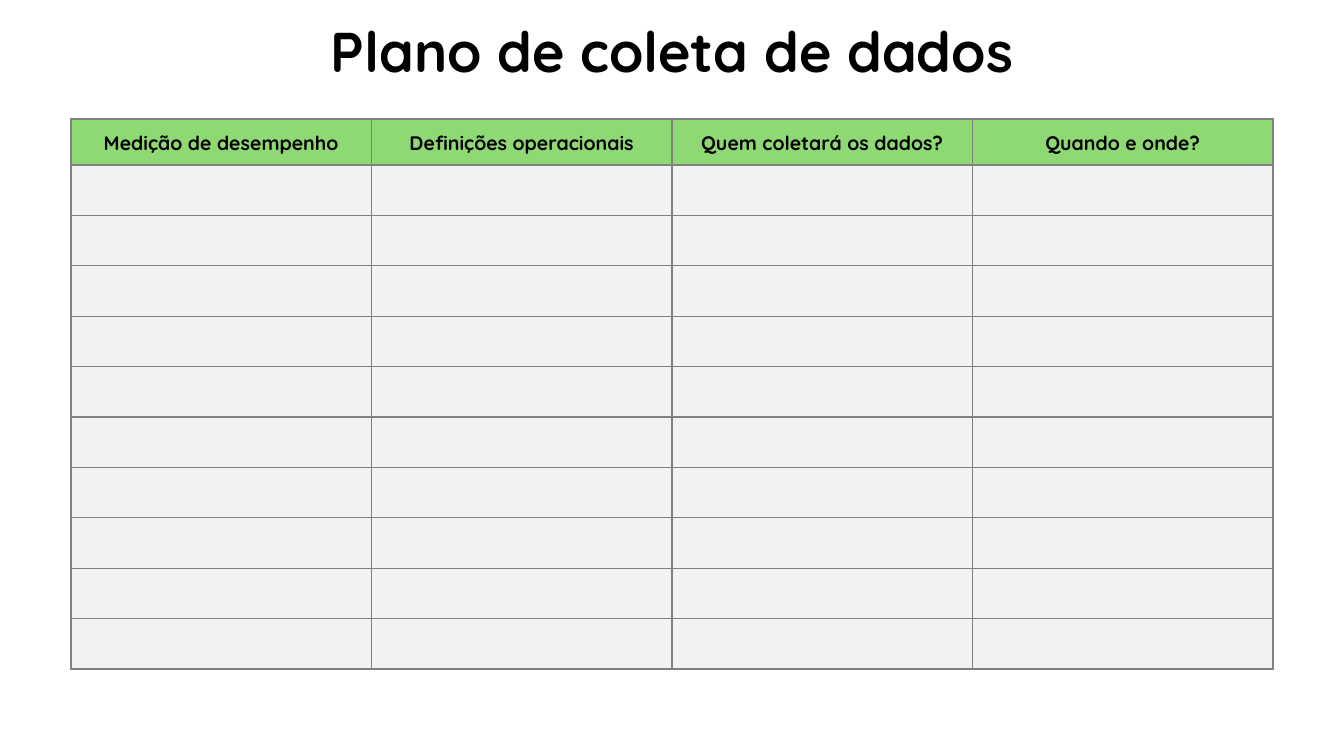
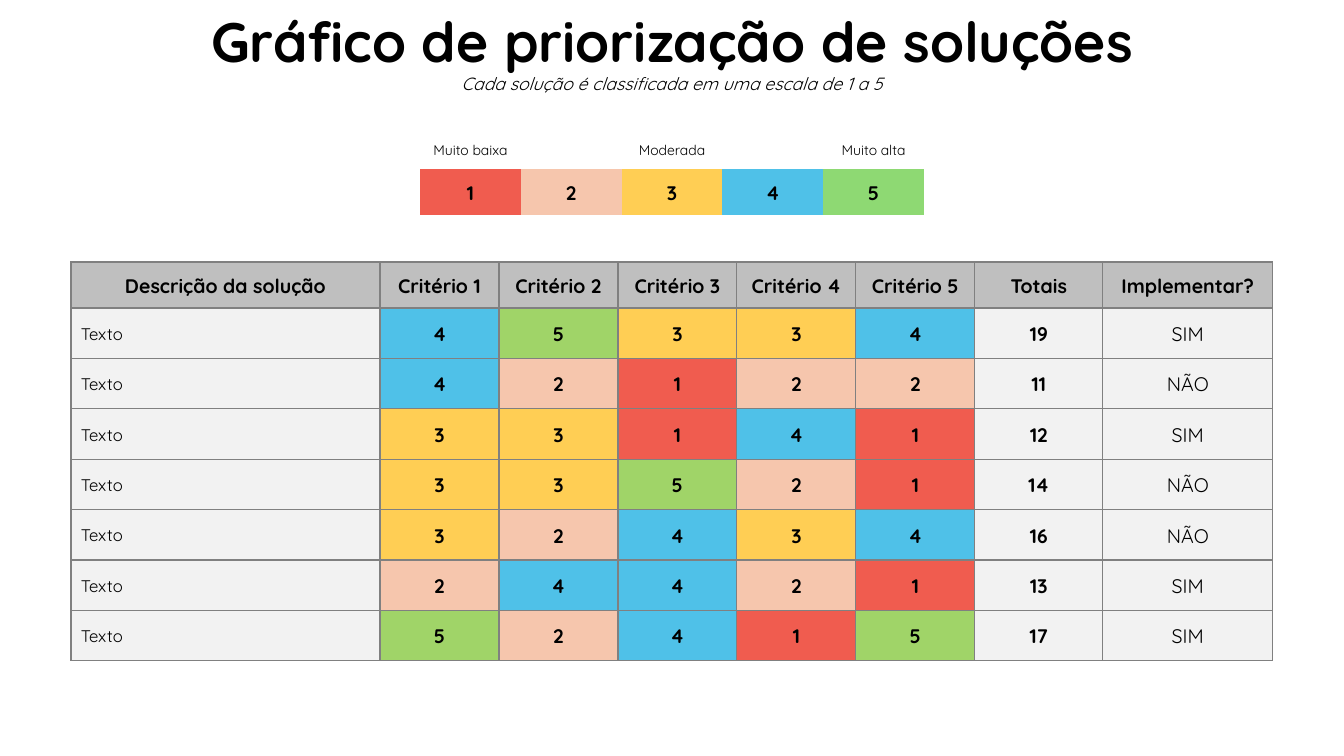
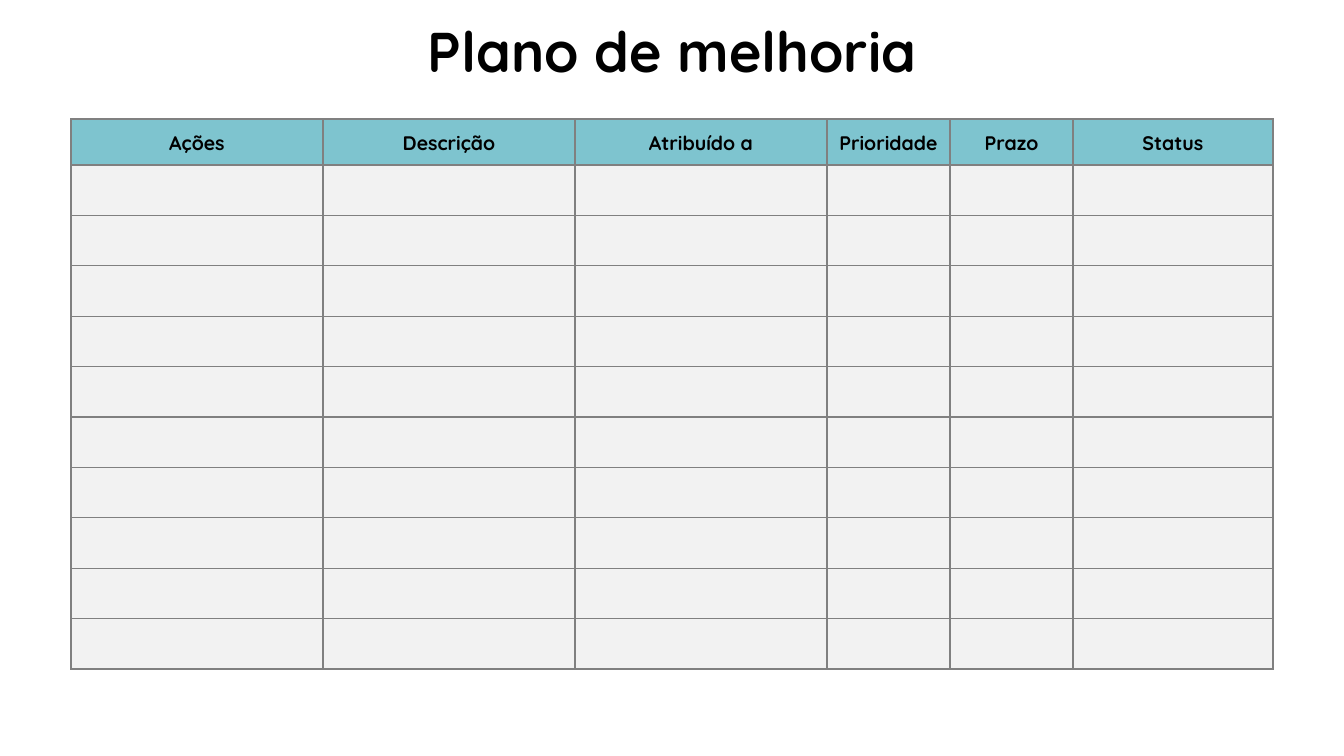
from lxml import etree
from pptx import Presentation
from pptx.dml.color import RGBColor
from pptx.enum.text import MSO_ANCHOR, PP_ALIGN
from pptx.oxml.ns import qn
from pptx.util import Emu, Pt

LEFT, CENTER = PP_ALIGN.LEFT, PP_ALIGN.CENTER
MIDDLE = MSO_ANCHOR.MIDDLE

PX = 914400 / 100.8
PAGE_WIDTH, PAGE_HEIGHT = 1344, 756
TABLE_LEFT, TABLE_WIDTH = 71, 1202
HEADER_HEIGHT = 46
CELL_INSET = 10
FONT = "Quicksand"
PLAIN_STYLE = "{2D5ABB26-0587-4C30-8999-92F81FD0307C}"

COLORS = {
    "text": "000000",
    "border": "808080",
    "body": "F2F2F2",
    "green": "8ED973",
    "teal": "7EC4CF",
    "gray": "BFBFBF",
}
SCORE_COLORS = {
    1: "F05C4F",
    2: "F6C6AD",
    3: "FFCE54",
    4: "4FC1E8",
    5: "A0D468",
}
LEGEND_COLORS = {**SCORE_COLORS, 5: COLORS["green"]}

SOLUTIONS = [
    ([4, 5, 3, 3, 4], "SIM"),
    ([4, 2, 1, 2, 2], "NÃO"),
    ([3, 3, 1, 4, 1], "SIM"),
    ([3, 3, 5, 2, 1], "NÃO"),
    ([3, 2, 4, 3, 4], "NÃO"),
    ([2, 4, 4, 2, 1], "SIM"),
    ([5, 2, 4, 1, 5], "SIM"),
]


def px(length):
    return Emu(round(length * PX))


def add_span(para, text, size=14, bold=False, italic=False, align=CENTER, spacing=1.07):
    para.alignment = align
    para.line_spacing = spacing
    span = para.add_run()
    span.text = text
    span.font.name = FONT
    span.font.size = Pt(size)
    span.font.bold = bold
    span.font.italic = italic
    span.font.color.rgb = RGBColor.from_string(COLORS["text"])


def add_title(page, title, width, size=40, subtitle=None):
    box = page.shapes.add_textbox(px((PAGE_WIDTH - width) / 2), 0, px(width), px(109))
    frame = box.text_frame
    frame.word_wrap = True
    frame.vertical_anchor = MIDDLE
    para = frame.paragraphs[0]
    add_span(para, title, size=size, bold=True, spacing=0.9)
    if subtitle:
        para.add_line_break()
        add_span(para, subtitle, size=12.6, italic=True, spacing=0.9)


def add_borders(cell):
    properties = cell._tc.get_or_add_tcPr()
    for side in ("lnL", "lnR", "lnT", "lnB"):
        line = etree.SubElement(properties, qn(f"a:{side}"), w=str(Pt(1)))
        fill = etree.SubElement(line, qn("a:solidFill"))
        etree.SubElement(fill, qn("a:srgbClr"), val=COLORS["border"])


def fill_cell(cell, text="", fill=None, bordered=True, **style):
    if bordered:
        add_borders(cell)
    if fill:
        cell.fill.solid()
        cell.fill.fore_color.rgb = RGBColor.from_string(fill)
    else:
        cell.fill.background()
    cell.vertical_anchor = MIDDLE
    cell.margin_left = cell.margin_right = px(CELL_INSET)
    cell.margin_top = cell.margin_bottom = px(CELL_INSET if text else 0)
    if text:
        add_span(cell.text_frame.paragraphs[0], text, **style)


def add_grid(page, left, top, columns, heights, rows, bordered=True):
    frame = page.shapes.add_table(
        len(rows), len(columns), px(left), px(top), px(sum(columns)), px(sum(heights))
    )
    table = frame.table
    table.first_row = table.horz_banding = False
    table._tbl.tblPr.find(qn("a:tableStyleId")).text = PLAIN_STYLE
    for column, width in zip(table.columns, columns):
        column.width = px(width)
    for row, height, contents in zip(table.rows, heights, rows):
        row.height = px(height)
        for cell, content in zip(row.cells, contents):
            fill_cell(cell, bordered=bordered, **content)


def add_main_table(page, top, columns, headers, header_fill, body, body_height):
    header = [{"text": text, "fill": header_fill, "bold": True} for text in headers]
    heights = [HEADER_HEIGHT] + [body_height / len(body)] * len(body)
    add_grid(page, TABLE_LEFT, top, columns, heights, [header] + body)


def add_legend(page, left, top, width):
    names = {1: "Muito baixa", 3: "Moderada", 5: "Muito alta"}
    labels = [{"text": names.get(score, ""), "size": 10} for score in LEGEND_COLORS]
    scores = [
        {"text": str(score), "fill": color, "bold": True}
        for score, color in LEGEND_COLORS.items()
    ]
    columns = [width / len(scores)] * len(scores)
    add_grid(page, left, top, columns, [39, HEADER_HEIGHT], [labels, scores], bordered=False)


def solution_row(scores, decision):
    body = COLORS["body"]
    return [
        {"text": "Texto", "fill": body, "size": 12, "align": LEFT},
        *({"text": str(score), "fill": SCORE_COLORS[score], "bold": True} for score in scores),
        {"text": str(sum(scores)), "fill": body, "bold": True},
        {"text": decision, "fill": body},
    ]


def build_plan(page, title, title_width, columns, headers, header_fill):
    add_title(page, title, title_width)
    body = [[{"fill": COLORS["body"]} for _ in headers] for _ in range(10)]
    add_main_table(page, 119, columns, headers, header_fill, body, 504)


def build_prioritization(page):
    add_title(
        page,
        "Gráfico de priorização de soluções",
        1030,
        size=39.6,
        subtitle="Cada solução é classificada em uma escala de 1 a 5",
    )
    criteria = [f"Critério {number}" for number in range(1, 6)]
    headers = ["Descrição da solução", *criteria, "Totais", "Implementar?"]
    columns = [309] + [119] * len(criteria) + [128, 170]
    body = [solution_row(scores, decision) for scores, decision in SOLUTIONS]
    add_main_table(page, 262, columns, headers, COLORS["gray"], body, 353)
    add_legend(page, 420, 130, 504)


def main():
    deck = Presentation()
    deck.slide_width, deck.slide_height = px(PAGE_WIDTH), px(PAGE_HEIGHT)
    collection, prioritization, improvement = (
        deck.slides.add_slide(deck.slide_layouts[6]) for _ in range(3)
    )
    build_plan(
        collection,
        "Plano de coleta de dados",
        727,
        [TABLE_WIDTH / 4] * 4,
        [
            "Medição de desempenho",
            "Definições operacionais",
            "Quem coletará os dados?",
            "Quando e onde?",
        ],
        COLORS["green"],
    )
    build_prioritization(prioritization)
    build_plan(
        improvement,
        "Plano de melhoria",
        550,
        [252, 252, 252, 123, 123, 200],
        ["Ações", "Descrição", "Atribuído a", "Prioridade", "Prazo", "Status"],
        COLORS["teal"],
    )
    deck.save("out.pptx")


if __name__ == "__main__":
    main()
